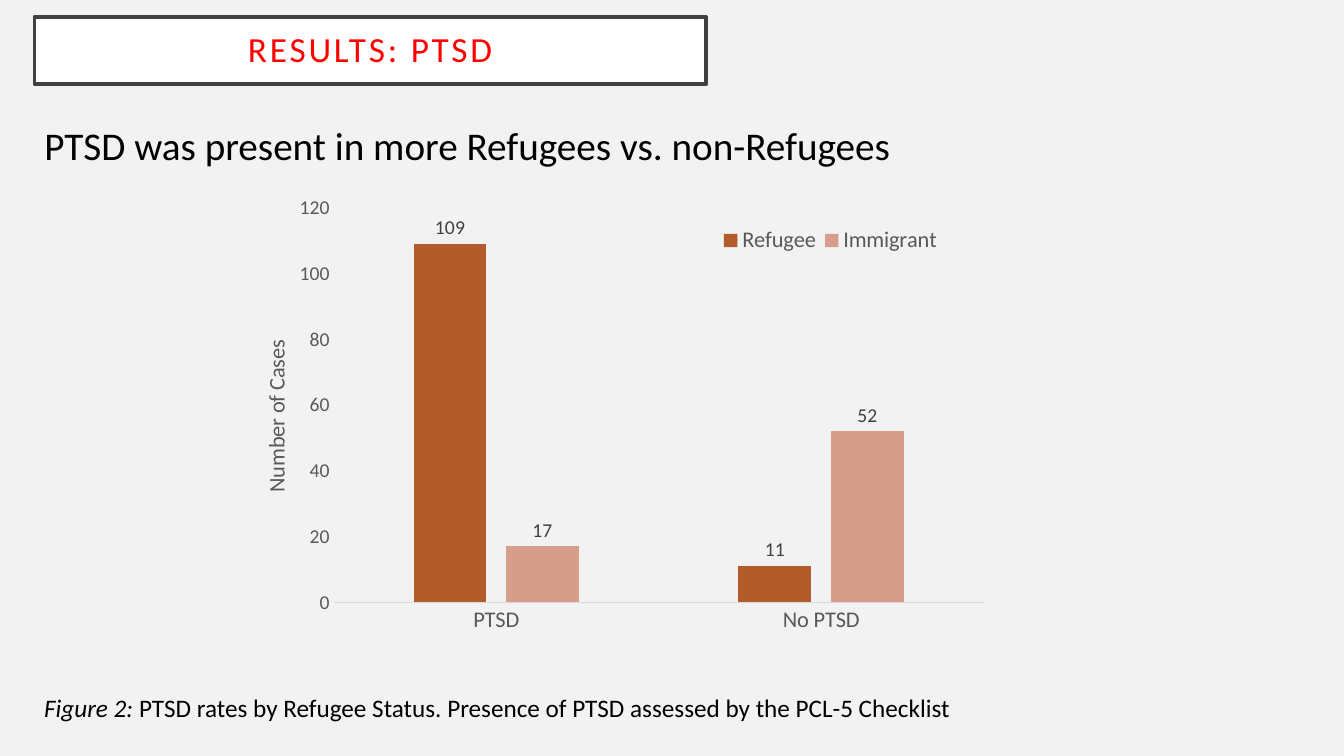
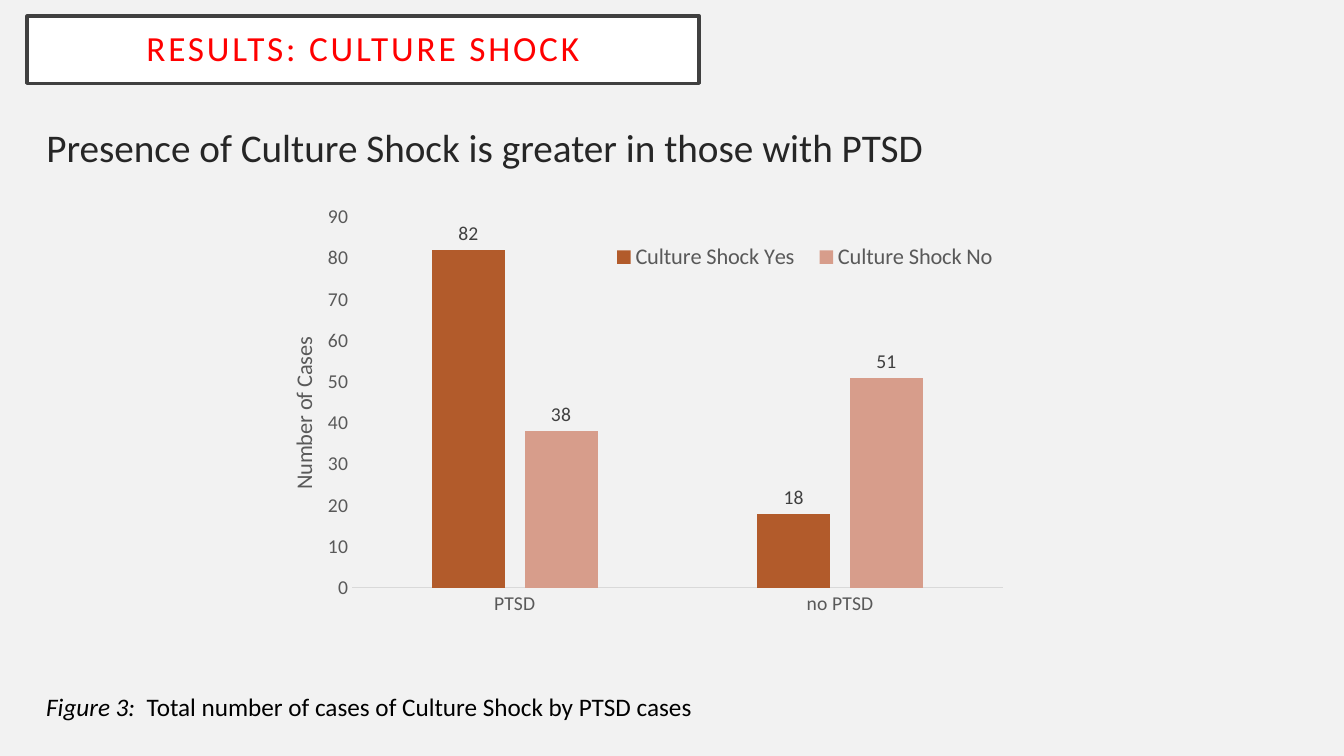
from dataclasses import dataclass

from pptx import Presentation
from pptx.chart.axis import CategoryAxis, ValueAxis
from pptx.chart.chart import Chart
from pptx.chart.data import CategoryChartData
from pptx.dml.color import RGBColor
from pptx.enum.chart import XL_CHART_TYPE, XL_LABEL_POSITION, XL_LEGEND_POSITION, XL_TICK_MARK
from pptx.enum.text import MSO_ANCHOR, MSO_AUTO_SIZE, PP_ALIGN
from pptx.oxml.ns import qn
from pptx.oxml.xmlchemy import BaseOxmlElement
from pptx.presentation import Presentation as Deck
from pptx.shapes.autoshape import Shape
from pptx.slide import Slide
from pptx.text.text import Font
from pptx.util import Pt

CLUSTERED = XL_CHART_TYPE.COLUMN_CLUSTERED
OUTSIDE_END = XL_LABEL_POSITION.OUTSIDE_END
LEGEND_BOTTOM = XL_LEGEND_POSITION.BOTTOM
NO_TICK = XL_TICK_MARK.NONE
CENTER = PP_ALIGN.CENTER
MIDDLE = MSO_ANCHOR.MIDDLE
TOP = MSO_ANCHOR.TOP
NO_FIT = MSO_AUTO_SIZE.NONE

FONT_NAME = "Calibri"
BACKGROUND = RGBColor(0xF2, 0xF2, 0xF2)
WHITE = RGBColor(0xFF, 0xFF, 0xFF)
BLACK = RGBColor(0x00, 0x00, 0x00)
RED = RGBColor(0xFF, 0x00, 0x00)
NEAR_BLACK = RGBColor(0x26, 0x26, 0x26)
DARK_GRAY = RGBColor(0x40, 0x40, 0x40)
MID_GRAY = RGBColor(0x59, 0x59, 0x59)
PALE_GRAY = RGBColor(0xD9, 0xD9, 0xD9)
RUST = RGBColor(0xB2, 0x5B, 0x2B)
SALMON = RGBColor(0xD7, 0x9D, 0x8B)
SERIES_COLORS = (RUST, SALMON)

TITLE_SIZE = (480, 48)
TITLE_INSET = 14.4
TITLE_AND_CONTENT = 1


@dataclass(frozen=True)
class Box:
    """A rectangle in points, or in fractions of the chart for chart parts."""

    left: float
    top: float
    width: float
    height: float


@dataclass(frozen=True)
class ColumnChart:
    box: Box
    plot_box: Box
    legend_box: Box
    axis_title_box: Box
    categories: tuple[str, str]
    series: dict[str, tuple[int, int]]
    maximum: int
    step: int
    category_size: int


@dataclass(frozen=True)
class ResultPage:
    title: str
    title_left: float
    title_top: float
    headline: str
    headline_color: RGBColor
    headline_box: Box
    figure_label: str
    caption: str
    caption_box: Box
    chart: ColumnChart


PAGES = (
    ResultPage(
        title="RESULTS: PTSD",
        title_left=24.5,
        title_top=12.2,
        headline="PTSD was present in more Refugees vs. non-Refugees",
        headline_color=BLACK,
        headline_box=Box(24.5, 82.8, 697.7, 41),
        figure_label="Figure 2: ",
        caption="PTSD rates by Refugee Status. Presence of PTSD assessed by the PCL-5 Checklist",
        caption_box=Box(24.5, 491, 871.2, 28.8),
        chart=ColumnChart(
            box=Box(164.2, 132.5, 550, 357.8),
            plot_box=Box(0.135, 0.045, 0.844, 0.787),
            legend_box=Box(0.63, 0.08, 0.3, 0.06),
            axis_title_box=Box(0.035, 0.3, 0.03, 0.31),
            categories=("PTSD", "No PTSD"),
            series={"Refugee": (109, 11), "Immigrant": (17, 52)},
            maximum=120,
            step=20,
            category_size=16,
        ),
    ),
    ResultPage(
        title="RESULTS: CULTURE SHOCK",
        title_left=19.4,
        title_top=11.5,
        headline="Presence of Culture Shock is greater in those with PTSD",
        headline_color=NEAR_BLACK,
        headline_box=Box(25.9, 84.2, 897.1, 41),
        figure_label="Figure 3:",
        caption="  Total number of cases of Culture Shock by PTSD cases",
        caption_box=Box(25.9, 490.3, 913, 28.8),
        chart=ColumnChart(
            box=Box(183.6, 139.7, 543.6, 338.4),
            plot_box=Box(0.125, 0.045, 0.855, 0.783),
            legend_box=Box(0.45, 0.1, 0.54, 0.06),
            axis_title_box=Box(0.036, 0.29, 0.03, 0.33),
            categories=("PTSD", "no PTSD"),
            series={"Culture Shock Yes": (82, 18), "Culture Shock No": (38, 51)},
            maximum=90,
            step=10,
            category_size=14,
        ),
    ),
)


def style_font(font: Font, size: float, color: RGBColor, italic: bool = False) -> None:
    font.name = FONT_NAME
    font.size = Pt(size)
    font.bold = False
    font.italic = italic
    font.color.rgb = color


def lengths(box: Box) -> tuple[Pt, Pt, Pt, Pt]:
    return Pt(box.left), Pt(box.top), Pt(box.width), Pt(box.height)


def move(shape: Shape, box: Box) -> None:
    shape.left, shape.top, shape.width, shape.height = lengths(box)


def add_title(page: Slide, result: ResultPage) -> None:
    title = page.shapes.title
    move(title, Box(result.title_left, result.title_top, *TITLE_SIZE))
    title.fill.solid()
    title.fill.fore_color.rgb = WHITE
    title.line.color.rgb = DARK_GRAY
    title.line.width = Pt(2.5)

    frame = title.text_frame
    frame.text = result.title
    frame.auto_size = NO_FIT
    frame.vertical_anchor = MIDDLE
    frame.margin_left = frame.margin_right = Pt(TITLE_INSET)
    frame.margin_top = frame.margin_bottom = Pt(TITLE_INSET)
    para = frame.paragraphs[0]
    para.alignment = CENTER
    para.line_spacing = 0.9
    span = para.runs[0]
    style_font(span.font, 25.2, RED)
    span.font._element.set("spc", "200")


def add_headline(page: Slide, result: ResultPage) -> None:
    body = page.placeholders[1]
    move(body, result.headline_box)
    frame = body.text_frame
    frame.text = result.headline
    frame.auto_size = NO_FIT
    frame.vertical_anchor = TOP
    para = frame.paragraphs[0]
    para.space_before = Pt(0)
    style_font(para.runs[0].font, 28, result.headline_color)
    properties = para._p.get_or_add_pPr()
    properties.set("marL", "0")
    properties.set("indent", "0")
    properties.append(properties.makeelement(qn("a:buNone")))


def add_caption(page: Slide, result: ResultPage) -> None:
    frame = page.shapes.add_textbox(*lengths(result.caption_box)).text_frame
    frame.word_wrap = True
    para = frame.paragraphs[0]
    for text, italic in ((result.figure_label, True), (result.caption, False)):
        span = para.add_run()
        span.text = text
        style_font(span.font, 18, BLACK, italic)


def place_part(part: BaseOxmlElement, index: int, box: Box, inner: bool = False) -> None:
    """Give a chart part a manual layout, inserted as the child at index."""
    for old in part.findall(qn("c:layout")):
        part.remove(old)
    layout = part.makeelement(qn("c:layout"))
    manual = layout.makeelement(qn("c:manualLayout"))
    layout.append(manual)
    settings = {"layoutTarget": "inner"} if inner else {}
    settings |= {"xMode": "edge", "yMode": "edge"}
    settings |= {"x": box.left, "y": box.top, "w": box.width, "h": box.height}
    for name, value in settings.items():
        manual.append(manual.makeelement(qn(f"c:{name}"), {"val": str(value)}))
    part.insert(index, layout)


def style_axis(axis: CategoryAxis | ValueAxis, size: int) -> None:
    axis.major_tick_mark = axis.minor_tick_mark = NO_TICK
    axis.has_major_gridlines = False
    style_font(axis.tick_labels.font, size, MID_GRAY)


def style_axes(chart: Chart, content: ColumnChart) -> None:
    category_axis, value_axis = chart.category_axis, chart.value_axis
    style_axis(category_axis, content.category_size)
    category_axis.format.line.color.rgb = PALE_GRAY
    category_axis.format.line.width = Pt(0.75)

    style_axis(value_axis, 14)
    value_axis.format.line.fill.background()
    value_axis.minimum_scale = 0
    value_axis.maximum_scale = content.maximum
    value_axis.major_unit = content.step
    frame = value_axis.axis_title.text_frame
    frame.text = "Number of Cases"
    style_font(frame.paragraphs[0].runs[0].font, 16, MID_GRAY)


def style_columns(chart: Chart) -> None:
    plot = chart.plots[0]
    plot.gap_width = 219
    plot.overlap = -27
    plot.vary_by_categories = False
    for series, color in zip(plot.series, SERIES_COLORS):
        series.format.fill.solid()
        series.format.fill.fore_color.rgb = color
        labels = series.data_labels
        labels.show_value = True
        labels.position = OUTSIDE_END
        style_font(labels.font, 14, DARK_GRAY)


def add_column_chart(page: Slide, content: ColumnChart) -> None:
    data = CategoryChartData()
    data.categories = content.categories
    for name, values in content.series.items():
        data.add_series(name, values)
    chart = page.shapes.add_chart(CLUSTERED, *lengths(content.box), data).chart
    chart.has_title = False
    style_font(chart.font, 10, BLACK)
    style_axes(chart, content)
    style_columns(chart)

    chart.has_legend = True
    chart.legend.position = LEGEND_BOTTOM
    chart.legend.include_in_layout = False
    style_font(chart.legend.font, 16, MID_GRAY)

    plot_area = chart.element.find(f".//{qn('c:plotArea')}")
    legend = chart.element.find(f".//{qn('c:legend')}")
    axis_title = chart.element.find(f".//{qn('c:valAx')}/{qn('c:title')}")
    place_part(plot_area, 0, content.plot_box, inner=True)
    place_part(legend, 1, content.legend_box)
    place_part(axis_title, 1, content.axis_title_box)


def add_result_page(deck: Deck, result: ResultPage) -> None:
    page = deck.slides.add_slide(deck.slide_layouts[TITLE_AND_CONTENT])
    add_title(page, result)
    add_headline(page, result)
    add_column_chart(page, result.chart)
    add_caption(page, result)


def main() -> None:
    deck = Presentation()
    deck.slide_width, deck.slide_height = Pt(960), Pt(540)
    background = deck.slide_master.background.fill
    background.solid()
    background.fore_color.rgb = BACKGROUND
    for result in PAGES:
        add_result_page(deck, result)
    deck.save("out.pptx")


if __name__ == "__main__":
    main()
